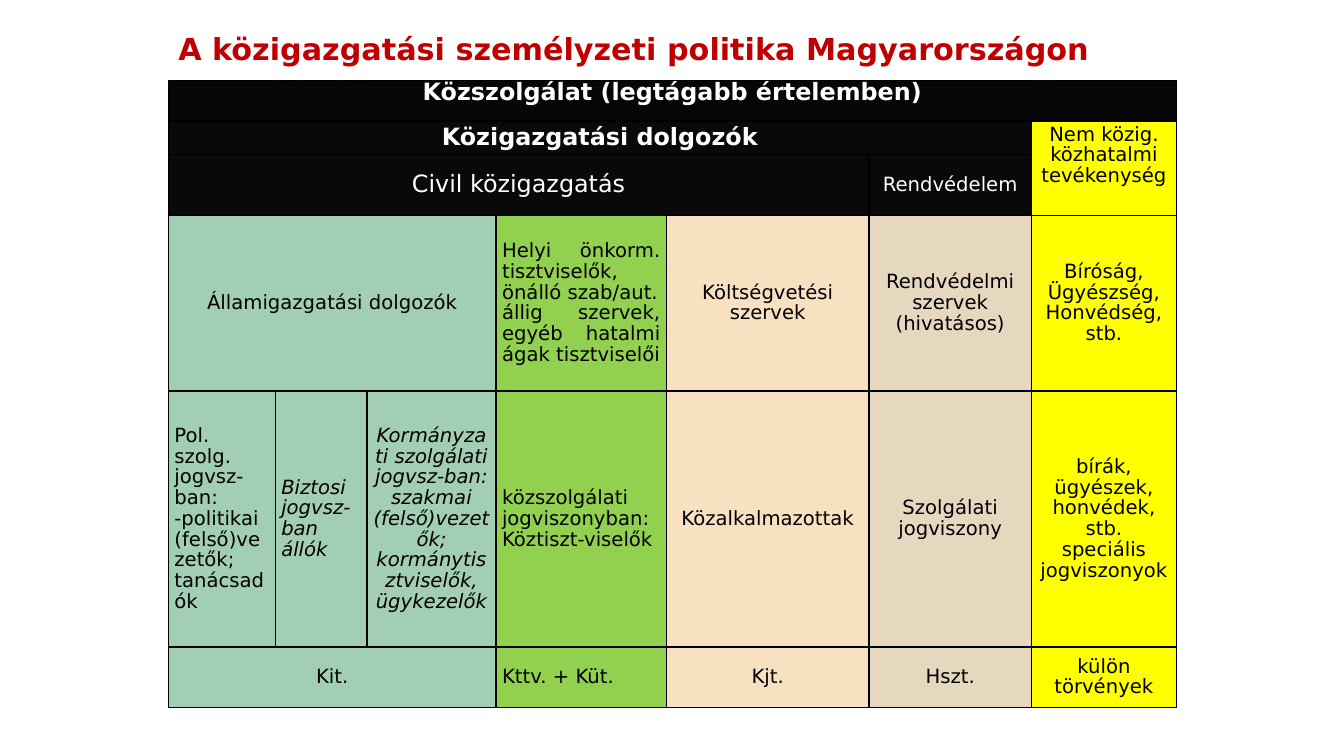
from lxml import etree
from pptx import Presentation
from pptx.dml.color import RGBColor
from pptx.enum import text
from pptx.oxml import ns
from pptx.util import Inches, Pt

FONT = "DejaVu Sans"
RED = RGBColor(0xC0, 0x00, 0x00)
WHITE = RGBColor(0xFF, 0xFF, 0xFF)
BLACK = RGBColor(0x00, 0x00, 0x00)
TOP_BAND = RGBColor(0x06, 0x06, 0x06)
BAND = RGBColor(0x09, 0x09, 0x09)
TEAL = RGBColor(0xA2, 0xCE, 0xB3)
GREEN = RGBColor(0x92, 0xD0, 0x50)
PEACH = RGBColor(0xF8, 0xE1, 0xC1)
SAND = RGBColor(0xE6, 0xD7, 0xBF)
YELLOW = RGBColor(0xFF, 0xFF, 0x00)

LEFT, CENTER, JUSTIFY = (text.PP_ALIGN.LEFT, text.PP_ALIGN.CENTER,
                         text.PP_ALIGN.JUSTIFY)
TOP, MIDDLE = text.MSO_ANCHOR.TOP, text.MSO_ANCHOR.MIDDLE

COLUMN_WIDTHS = [1.06, 0.91, 1.28, 1.69, 2.01, 1.61, 1.44]
ROW_HEIGHTS = [0.4, 0.33, 0.61, 1.74, 2.54, 0.6]

# row, column, rows spanned, columns spanned, fill, wording, size, bold
HEADINGS = [
    (0, 0, 1, 7, TOP_BAND, "Közszolgálat (legtágabb értelemben)", 17, True),
    (1, 0, 1, 6, BAND, "Közigazgatási dolgozók", 17, True),
    (1, 6, 2, 1, YELLOW, "Nem közig. közhatalmi tevékenység", 14, False),
    (2, 0, 1, 5, BAND, "Civil közigazgatás", 17, False),
    (2, 5, 1, 1, BAND, "Rendvédelem", 14, False),
]

# row, column, columns spanned, fill, wording, alignment, italic
STAFF_GROUPS = [
    (3, 0, 3, TEAL, "Államigazgatási dolgozók", CENTER, False),
    (3, 3, 1, GREEN, "Helyi önkorm. tisztviselők, önálló szab/aut.\n"
     "állig szervek, egyéb hatalmi ágak tisztviselői", JUSTIFY, False),
    (3, 4, 1, PEACH, "Költségvetési szervek", CENTER, False),
    (3, 5, 1, SAND, "Rendvédelmi szervek (hivatásos)", CENTER, False),
    (3, 6, 1, YELLOW, "Bíróság,\nÜgyészség, Honvédség, stb.", CENTER, False),
    (4, 0, 1, TEAL, "Pol. szolg. jogvsz-ban:\n"
     "-politikai (felső)vezetők; tanácsadók", JUSTIFY, False),
    (4, 1, 1, TEAL, "Biztosi jogvsz-ban állók", JUSTIFY, True),
    (4, 2, 1, TEAL, "Kormányzati szolgálati jogvsz-ban: szakmai "
     "(felső)vezetők; kormánytisztviselők, ügykezelők", CENTER, True),
    (4, 3, 1, GREEN, "közszolgálati jogviszonyban:\nKöztiszt-viselők",
     JUSTIFY, False),
    (4, 4, 1, PEACH, "Közalkalmazottak", CENTER, False),
    (4, 5, 1, SAND, "Szolgálati jogviszony", CENTER, False),
    (4, 6, 1, YELLOW, "bírák, ügyészek, honvédek, stb.\n"
     "speciális jogviszonyok", CENTER, False),
    (5, 0, 3, TEAL, "Kit.", CENTER, False),
    (5, 3, 1, GREEN, "Kttv. + Küt.", LEFT, False),
    (5, 4, 1, PEACH, "Kjt.", CENTER, False),
    (5, 5, 1, SAND, "Hszt.", CENTER, False),
    (5, 6, 1, YELLOW, "külön törvények", CENTER, False),
]


def write(frame, wording, size, color, align, bold=False, italic=False):
    frame.text = wording
    for paragraph in frame.paragraphs:
        paragraph.alignment = align
        paragraph.line_spacing = 0.9
        for run in paragraph.runs:
            font = run.font
            font.name, font.size = FONT, Pt(size)
            font.bold, font.italic = bold, italic
            font.color.rgb = color


def add_borders(cell):
    """Draw a 1 pt black line on all four sides; call before filling."""
    properties = cell._tc.get_or_add_tcPr()
    for side in ("a:lnL", "a:lnR", "a:lnT", "a:lnB"):
        line = etree.SubElement(properties, ns.qn(side), w=str(Pt(1)))
        fill = etree.SubElement(line, ns.qn("a:solidFill"))
        etree.SubElement(fill, ns.qn("a:srgbClr"), val=str(BLACK))


def add_title(slide):
    title = slide.shapes.add_textbox(Inches(1.67), Inches(0.2),
                                     Inches(10), Inches(0.6))
    frame = title.text_frame
    frame.word_wrap = True
    frame.vertical_anchor = MIDDLE
    write(frame, "A közigazgatási személyzeti politika Magyarországon",
          21.6, RED, LEFT, bold=True)


def add_grid(slide):
    table = slide.shapes.add_table(
        len(ROW_HEIGHTS), len(COLUMN_WIDTHS), Inches(1.67), Inches(0.8),
        Inches(sum(COLUMN_WIDTHS)), Inches(sum(ROW_HEIGHTS))).table
    table.first_row = table.horz_banding = False
    for column, width in zip(table.columns, COLUMN_WIDTHS):
        column.width = Inches(width)
    for row, height in zip(table.rows, ROW_HEIGHTS):
        row.height = Inches(height)
    for cell in table.iter_cells():
        cell.margin_left = cell.margin_right = Inches(0.06)
        cell.margin_top = cell.margin_bottom = 0
        cell.vertical_anchor = MIDDLE
        add_borders(cell)
    return table


def fill_block(table, row, column, rows, columns, color):
    """Merge a block of cells, colour it and return its first cell."""
    first = table.cell(row, column)
    if rows * columns > 1:
        first.merge(table.cell(row + rows - 1, column + columns - 1))
    for r in range(row, row + rows):
        for c in range(column, column + columns):
            cell = table.cell(r, c)
            cell.fill.solid()
            cell.fill.fore_color.rgb = color
    return first


def main():
    deck = Presentation()
    deck.slide_width, deck.slide_height = Inches(13.33), Inches(7.5)
    slide = deck.slides.add_slide(deck.slide_layouts[6])
    add_title(slide)
    table = add_grid(slide)
    for row, column, rows, columns, fill, wording, size, bold in HEADINGS:
        heading = fill_block(table, row, column, rows, columns, fill)
        color = BLACK if fill == YELLOW else WHITE
        write(heading.text_frame, wording, size, color, CENTER, bold)
    table.cell(0, 0).vertical_anchor = TOP
    table.cell(1, 6).margin_bottom = Inches(0.25)
    for row, column, columns, fill, wording, align, italic in STAFF_GROUPS:
        group = fill_block(table, row, column, 1, columns, fill)
        write(group.text_frame, wording, 14, BLACK, align, italic=italic)
    deck.save("out.pptx")


if __name__ == "__main__":
    main()
